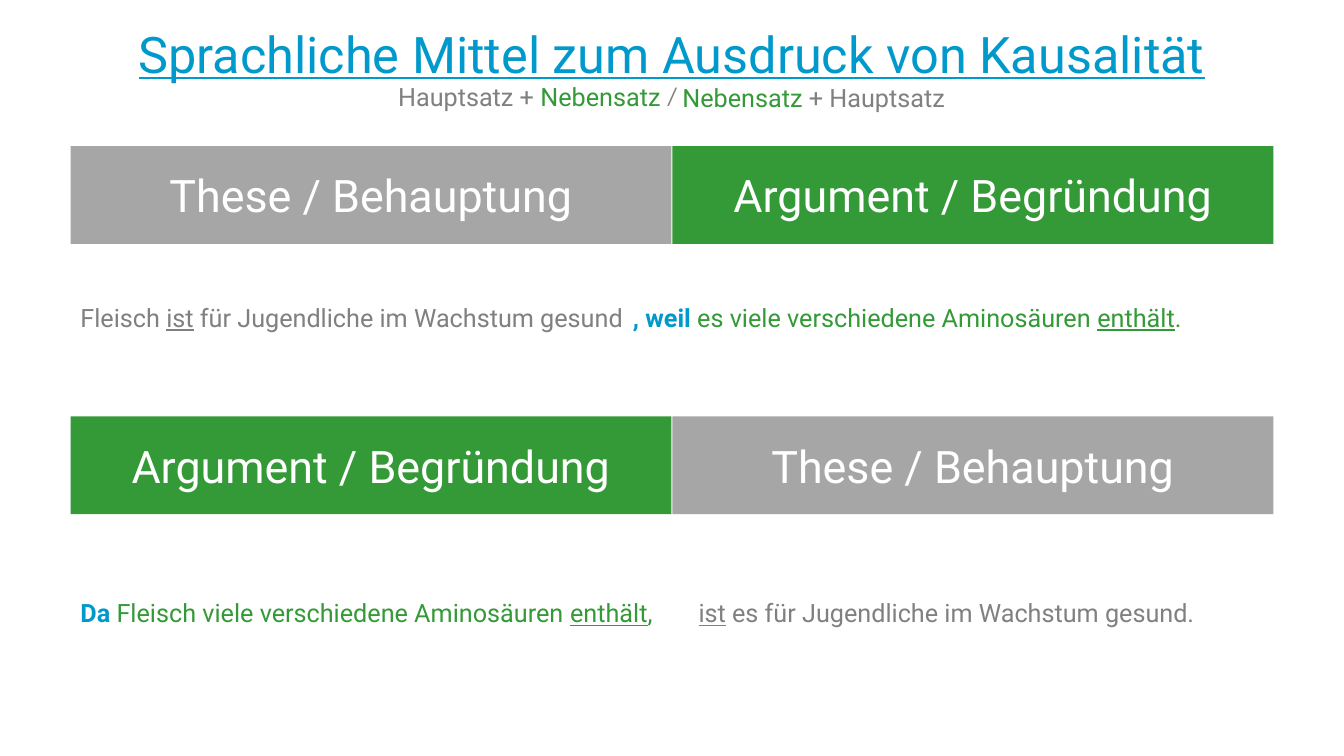
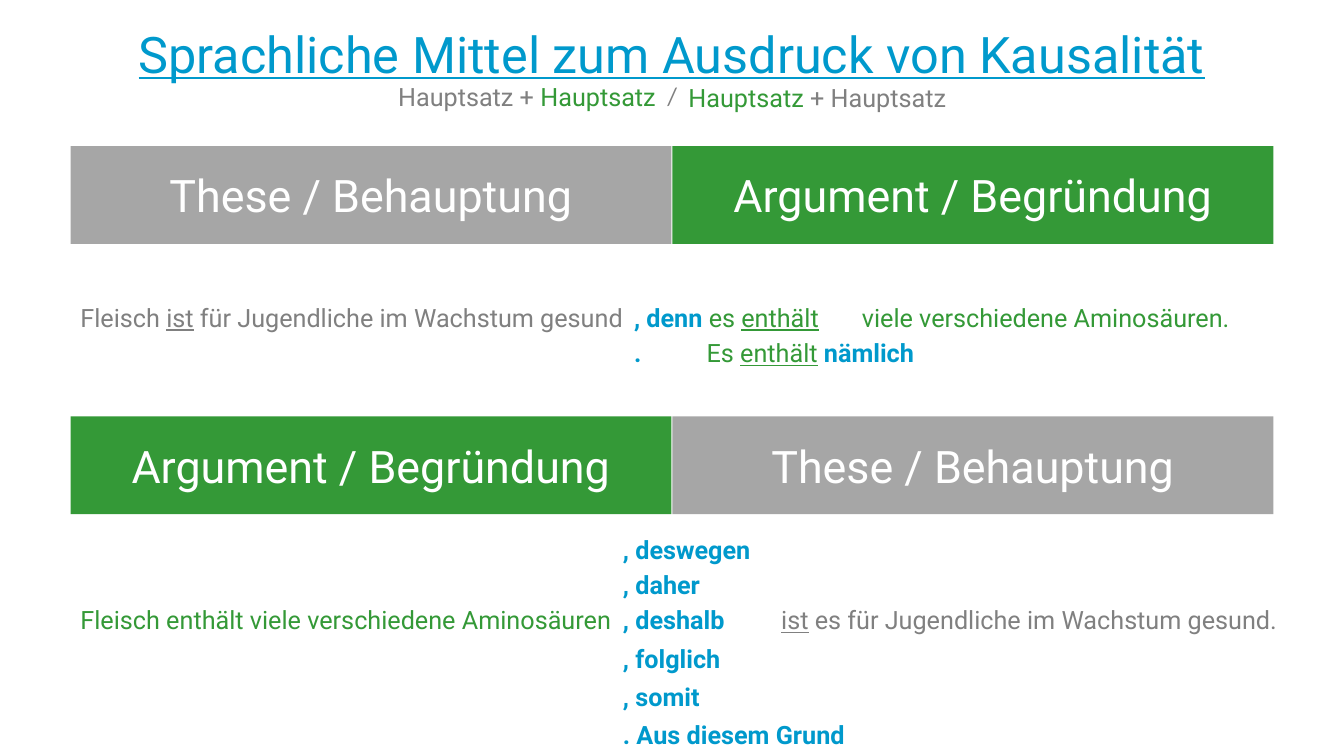
"""Build two slides on German causal clauses, thesis and argument in both orders."""
from lxml import etree
from pptx import Presentation
from pptx.dml.color import RGBColor
from pptx.enum import shapes, text
from pptx.oxml import ns
from pptx.util import Inches, Pt

BLUE = RGBColor(0x00, 0x99, 0xCC)
GREEN = RGBColor(0x34, 0x99, 0x37)
GRAY = RGBColor(0x80, 0x80, 0x80)
BAND_GRAY = RGBColor(0xA6, 0xA6, 0xA6)
WHITE = RGBColor(0xFF, 0xFF, 0xFF)

STYLES = {
    "title": {"size": Pt(36), "color": BLUE, "underline": True},
    "band": {"size": Pt(32), "color": WHITE},
    "thesis": {"color": GRAY},
    "thesis verb": {"color": GRAY, "underline": True},
    "argument": {"color": GREEN},
    "argument verb": {"color": GREEN, "underline": True},
    "link": {"color": BLUE, "bold": True},
    "slash": {"color": GRAY, "name": "Calibri"},
}

WIDTH, HEIGHT = 13.33, 7.5
LEFT, MIDDLE = 0.7, 6.67
BAND_WIDTH, BAND_HEIGHT = 5.96, 0.97
LINE_WIDTH, LINE_HEIGHT = 5.96, 0.4
FIRST_ROW = 2.95
LINK_LEFT = 6.08

TITLE = "Sprachliche Mittel zum Ausdruck von Kausalität"
THESIS_BAND = ("These / Behauptung", BAND_GRAY)
ARGUMENT_BAND = ("Argument / Begründung", GREEN)
BAND_ROWS = [(1.45, (THESIS_BAND, ARGUMENT_BAND)), (4.13, (ARGUMENT_BAND, THESIS_BAND))]

THESIS = [("Fleisch ", "thesis"), ("ist", "thesis verb"),
          (" für Jugendliche im Wachstum gesund", "thesis")]
CONCLUSION = [("ist", "thesis verb"), (" es für Jugendliche im Wachstum gesund.", "thesis")]
LINKS = [(5.25, ", deswegen"), (5.6, ", daher"), (6.33, ", folglich"),
         (6.71, ", somit"), (7.09, ". Aus diesem Grund")]

SLIDES = [
    {
        "clause": "Nebensatz",
        "clause_left": MIDDLE,
        "lines": [
            {"left": 6.18, "top": FIRST_ROW,
             "runs": [(", weil", "link"), (" es viele verschiedene Aminosäuren ", "argument"),
                      ("enthält", "argument verb"), (".", "argument")]},
            {"left": LEFT, "top": 5.88,
             "runs": [("Da", "link"), (" Fleisch viele verschiedene Aminosäuren ", "argument"),
                      ("enthält", "argument verb"), (",", "argument")]},
            {"left": 6.83, "top": 5.88, "runs": CONCLUSION},
        ],
    },
    {
        "clause": "Hauptsatz",
        "clause_left": 6.73,
        "lines": [
            {"left": 6.19, "top": FIRST_ROW, "width": 6.36, "tab": 2.26,
             "runs": [(", denn", "link"), (" es ", "argument"), ("enthält", "argument verb"),
                      ("\tviele verschiedene Aminosäuren.", "argument")]},
            {"left": 6.19, "top": 3.3, "tab": 0.72,
             "runs": [(".", "link"), ("\tEs ", "argument"), ("enthält", "argument verb"),
                      (" ", "argument"), ("nämlich", "link")]},
            {"left": LEFT, "top": 5.95,
             "runs": [("Fleisch enthält viele verschiedene Aminosäuren", "argument")]},
            {"left": LINK_LEFT, "top": 5.95, "width": 7.13, "tab": 1.57,
             "runs": [(", deshalb\t", "link"), *CONCLUSION]},
            *({"left": LINK_LEFT, "top": top, "runs": [(link, "link")]} for top, link in LINKS),
        ],
    },
]


def write_runs(paragraph, runs):
    for words, style in runs:
        run = paragraph.add_run()
        run.text = words
        for key, value in {"name": "Roboto", "size": Pt(18), **STYLES[style]}.items():
            if key == "color":
                run.font.color.rgb = value
            else:
                setattr(run.font, key, value)


def set_frame(frame, **settings):
    for key, value in {"word_wrap": True, **settings}.items():
        setattr(frame, key, value)


def add_line(slide, left, top, runs, width=LINE_WIDTH, tab=None):
    box = slide.shapes.add_textbox(*map(Inches, (left, top, width, LINE_HEIGHT)))
    set_frame(box.text_frame, auto_size=text.MSO_AUTO_SIZE.SHAPE_TO_FIT_TEXT)
    paragraph = box.text_frame.paragraphs[0]
    if tab:
        properties = paragraph._p.get_or_add_pPr()
        stops = etree.SubElement(properties, ns.qn("a:tabLst"))
        etree.SubElement(stops, ns.qn("a:tab"), pos=str(Inches(tab)), algn="l")
    write_runs(paragraph, runs)


def add_title(slide):
    box = slide.shapes.add_textbox(*map(Inches, (0, 0.22, WIDTH, 0.61)))
    set_frame(box.text_frame, margin_left=0, margin_right=0, margin_top=0, margin_bottom=0,
              vertical_anchor=text.MSO_ANCHOR.MIDDLE)
    paragraph = box.text_frame.paragraphs[0]
    paragraph.alignment = text.PP_ALIGN.CENTER
    write_runs(paragraph, [(TITLE, "title")])


def add_band(slide, left, top, label, color):
    band = slide.shapes.add_shape(shapes.MSO_SHAPE.RECTANGLE,
                                  *map(Inches, (left, top, BAND_WIDTH, BAND_HEIGHT)))
    band.shadow.inherit = False
    band.fill.solid()
    band.fill.fore_color.rgb = color
    band.line.fill.background()
    set_frame(band.text_frame, margin_top=0, margin_bottom=0,
              vertical_anchor=text.MSO_ANCHOR.MIDDLE)
    paragraph = band.text_frame.paragraphs[0]
    paragraph.alignment = text.PP_ALIGN.CENTER
    write_runs(paragraph, [(label, "band")])


def add_subtitle(slide, clause, clause_left):
    add_line(slide, 3.85, 0.76, [("Hauptsatz + ", "thesis"), (clause, "argument")], 2.81)
    add_line(slide, clause_left, 0.77,
             [(clause, "argument"), (" + Hauptsatz", "thesis")], 2.87)
    add_line(slide, 6.52, 0.75, [("/", "slash")], 0.3)


def build_slide(presentation, content):
    slide = presentation.slides.add_slide(presentation.slide_layouts[6])
    add_title(slide)
    add_subtitle(slide, content["clause"], content["clause_left"])
    for top, bands in BAND_ROWS:
        for left, band in zip((LEFT, MIDDLE), bands):
            add_band(slide, left, top, *band)
    add_line(slide, LEFT, FIRST_ROW, THESIS)
    for line in content["lines"]:
        add_line(slide, **line)


def main():
    presentation = Presentation()
    presentation.slide_width = Inches(WIDTH)
    presentation.slide_height = Inches(HEIGHT)
    for content in SLIDES:
        build_slide(presentation, content)
    presentation.save("out.pptx")


if __name__ == "__main__":
    main()
